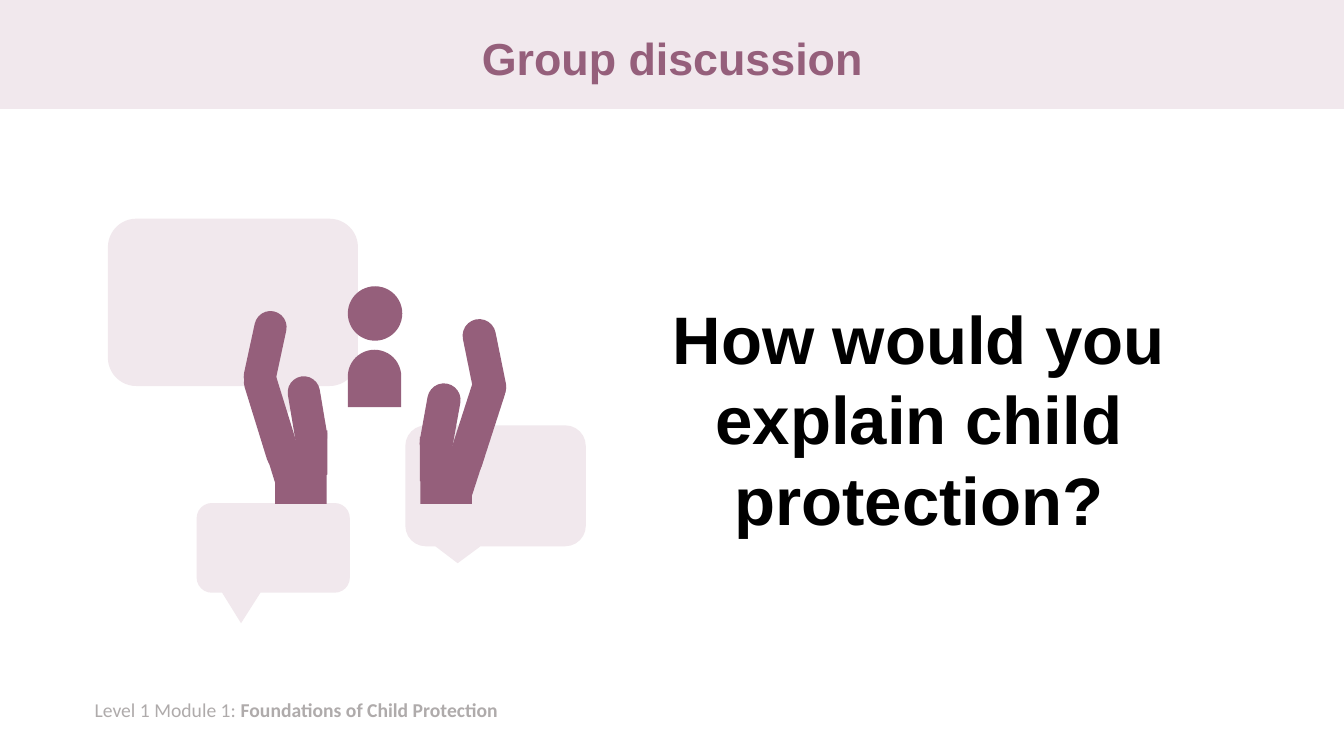
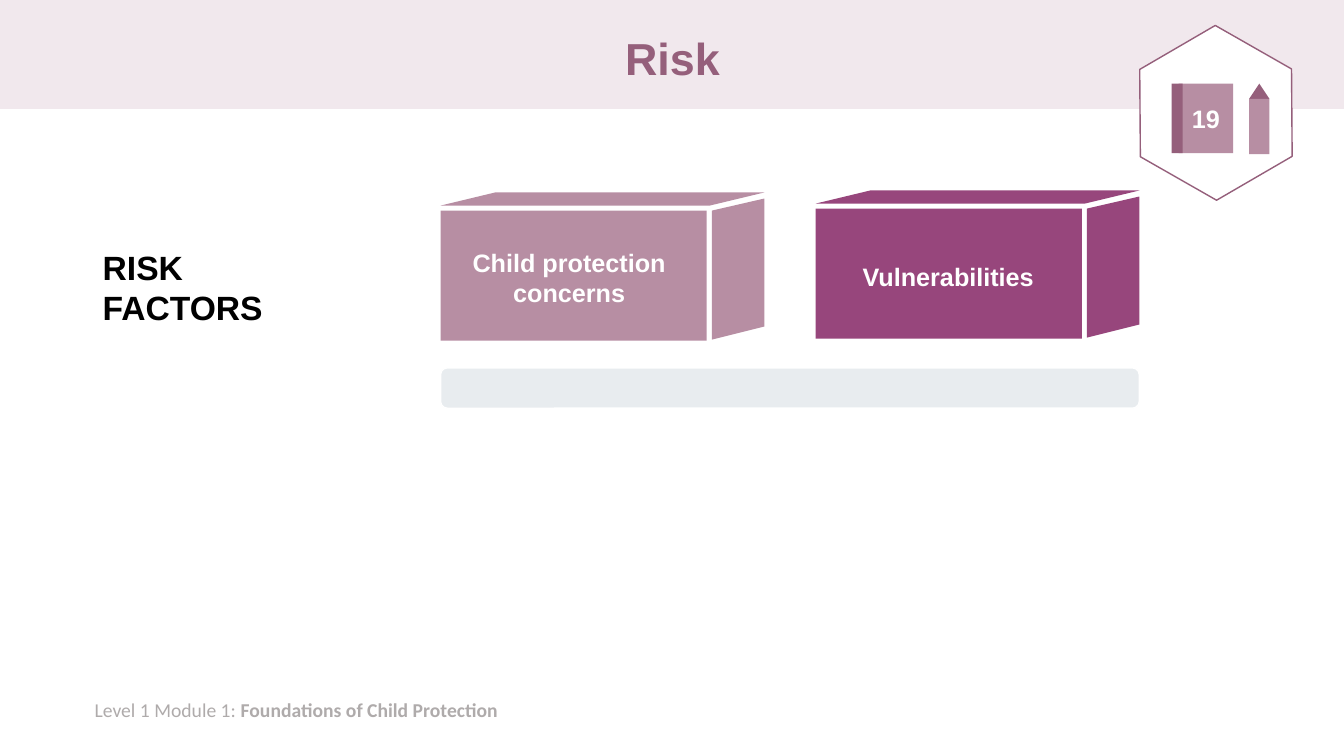
from dataclasses import dataclass

from pptx import Presentation
from pptx.dml.color import RGBColor
from pptx.enum.shapes import MSO_SHAPE as Kind
from pptx.enum.text import MSO_ANCHOR as Anchor, PP_ALIGN as Align
from pptx.util import Inches, Pt


@dataclass(frozen=True)
class Theme:
    plum: str = "955F7B"
    mauve: str = "B78EA3"
    berry: str = "97467C"
    blush: str = "F1E8ED"
    mist: str = "E8ECEF"
    gray: str = "AFABAB"
    black: str = "000000"
    white: str = "FFFFFF"
    font: str = "Arial"
    small: str = "Calibri"
    title: int = 32
    ask: int = 48
    head: int = 24
    body: int = 18
    foot: int = 14


T = Theme()
WIDE, HIGH = 13.33, 7.5

FOOTER = [("Level 1 Module 1: ", False), ("Foundations of Child Protection", True)]
QUESTION = "How would you explain child protection?"

# Place, then callout adjustments
BUBBLES = [
    ((1.07, 2.17, 2.48, 1.66), (0.2, 0.69, 0.17)),
    ((4.02, 4.22, 1.79, 1.2), (-0.21, 0.64, 0.17)),
    ((1.95, 4.99, 1.52, 0.89), (-0.21, 0.84, 0.17)),
]
# Place, then rotation
FINGERS = [
    ((2.53, 3.61, 0.33, 1.08), 342.8),
    ((2.47, 3.08, 0.32, 0.82), 12.2),
    ((2.89, 3.73, 0.32, 0.76), 350.5),
    ((4.56, 3.68, 0.34, 1.08), 17.9),
    ((4.64, 3.16, 0.33, 0.85), 348.5),
    ((4.2, 3.8, 0.33, 0.76), 10.2),
]
# Place, rotation, mirrored
PALMS = [
    ((2.79, 4.24, 0.42, 0.65), 72.8, True),
    ((4.21, 4.3, 0.42, 0.67), 287.9, False),
]
WRISTS = [(2.73, 4.57, 0.51, 0.43), (4.17, 4.57, 0.51, 0.43)]

# Front corner, colour, label, label place
BOXES = [
    (4.37, 2.09, T.mauve, "Child protection concerns", (4.55, 2.4, 2.19, 0.71)),
    (8.09, 2.07, T.berry, "Vulnerabilities", (8.31, 2.54, 2.19, 0.4)),
]
FRONT = (2.64, 1.29)
# Box faces, as offsets from the front corner
FACES = [
    [(2.69, 0), (3.21, -0.12), (3.21, 1.15), (2.69, 1.28)],
    [(0, -0.05), (0.54, -0.18), (3.21, -0.18), (2.67, -0.05)],
]


def paint(shape, fill, line=None):
    shape.shadow.inherit = False
    shape.fill.solid()
    shape.fill.fore_color.rgb = RGBColor.from_string(fill)
    if line:
        shape.line.color.rgb = RGBColor.from_string(line)
        shape.line.width = Pt(1)
    else:
        shape.line.fill.background()
    return shape


def draw(shapes, kind, at, fill, line=None, adj=(), turn=0, flip=False):
    shape = paint(shapes.add_shape(kind, *map(Inches, at)), fill, line)
    for i, value in enumerate(adj):
        shape.adjustments[i] = value
    shape.rotation = turn
    if flip:
        shape.element.spPr.get_or_add_xfrm().set("flipH", "1")
    return shape


def outline(shapes, points, fill):
    spots = [(Inches(x), Inches(y)) for x, y in points]
    pen = shapes.build_freeform(*spots[0])
    pen.add_line_segments(spots[1:], close=True)
    return paint(pen.convert_to_shape(), fill)


def write(shape, runs, size, color, font=T.font, align=Align.CENTER,
          anchor=Anchor.MIDDLE, space=None):
    """Fill a shape with one paragraph of (text, bold) runs."""
    frame = shape.text_frame
    frame.word_wrap = True
    frame.vertical_anchor = anchor
    para = frame.paragraphs[0]
    para.alignment = align
    if space:
        para.line_spacing = space
    for text, bold in runs:
        run = para.add_run()
        run.text = text
        run.font.name = font
        run.font.size = Pt(size)
        run.font.bold = bold
        run.font.color.rgb = RGBColor.from_string(color)


def label(shapes, at, text, size, color, **style):
    write(shapes.add_textbox(*map(Inches, at)), [(text, True)], size, color, **style)


def start(deck, title):
    """Add a slide with the shared band, footer and title."""
    shapes = deck.slides.add_slide(deck.slide_layouts[6]).shapes
    draw(shapes, Kind.RECTANGLE, (0, 0, WIDE, 1.08), T.blush)
    foot = shapes.add_textbox(*map(Inches, (0.84, 6.87, 11.35, 0.34)))
    write(foot, FOOTER, T.foot, T.gray, T.small, Align.LEFT, Anchor.TOP)
    label(shapes, (0.92, 0.13, 11.5, 0.95), title, T.title, T.plum, space=0.9)
    return shapes


def group(shapes):
    return shapes.add_group_shape().shapes


def hands(shapes):
    for at, turn in FINGERS:
        draw(shapes, Kind.ROUNDED_RECTANGLE, at, T.plum, adj=[0.5], turn=turn)
    for at, turn, flip in PALMS:
        draw(shapes, Kind.FLOWCHART_MANUAL_INPUT, at, T.plum, turn=turn, flip=flip)
    draw(shapes, Kind.ROUND_2_SAME_RECTANGLE, (3.45, 3.47, 0.53, 0.57), T.plum,
         adj=(0.5, 0))
    draw(shapes, Kind.OVAL, (3.45, 2.84, 0.54, 0.54), T.plum)
    for at in WRISTS:
        draw(shapes, Kind.RECTANGLE, at, T.plum)


def badge(shapes, page):
    """Draw the workbook page marker."""
    draw(shapes, Kind.HEXAGON, (11.19, 0.37, 1.74, 1.5), T.white, T.plum,
         adj=[0.29], turn=29.7)
    book = draw(shapes, Kind.RECTANGLE, (11.69, 0.83, 0.54, 0.69), T.mauve)
    write(book, [(page, True)], T.body, T.white)
    draw(shapes, Kind.RECTANGLE, (11.62, 0.83, 0.11, 0.69), T.plum)
    draw(shapes, Kind.ISOSCELES_TRIANGLE, (12.39, 0.83, 0.2, 0.15), T.plum)
    draw(shapes, Kind.RECTANGLE, (12.39, 0.98, 0.2, 0.55), T.mauve)


def box(shapes, left, top, color):
    draw(shapes, Kind.RECTANGLE, (left, top, *FRONT), color)
    for face in FACES:
        outline(shapes, [(left + x, top + y) for x, y in face], color)


def talk(deck):
    shapes = start(deck, "Group discussion")
    label(shapes, (5.97, 2.5, 6.29, 3.29), QUESTION, T.ask, T.black)
    cloud = group(shapes)
    for at, adj in BUBBLES:
        draw(cloud, Kind.ROUNDED_RECTANGULAR_CALLOUT, at, T.blush, adj=adj)
    hands(group(shapes))


def risk(deck):
    shapes = start(deck, "Risk")
    label(shapes, (0.92, 2.4, 2.55, 0.91), "RISK FACTORS", T.head, T.black,
          align=Align.LEFT, anchor=Anchor.TOP)
    draw(shapes, Kind.ROUNDED_RECTANGLE, (4.37, 3.65, 6.93, 0.4), T.mist, T.white)
    badge(group(shapes), "19")
    for left, top, color, text, at in BOXES:
        box(group(shapes), left, top, color)
        label(shapes, at, text, T.body, T.white, anchor=Anchor.TOP)


def main():
    deck = Presentation()
    deck.slide_width, deck.slide_height = Inches(WIDE), Inches(HIGH)
    talk(deck)
    risk(deck)
    deck.save("out.pptx")


if __name__ == "__main__":
    main()
